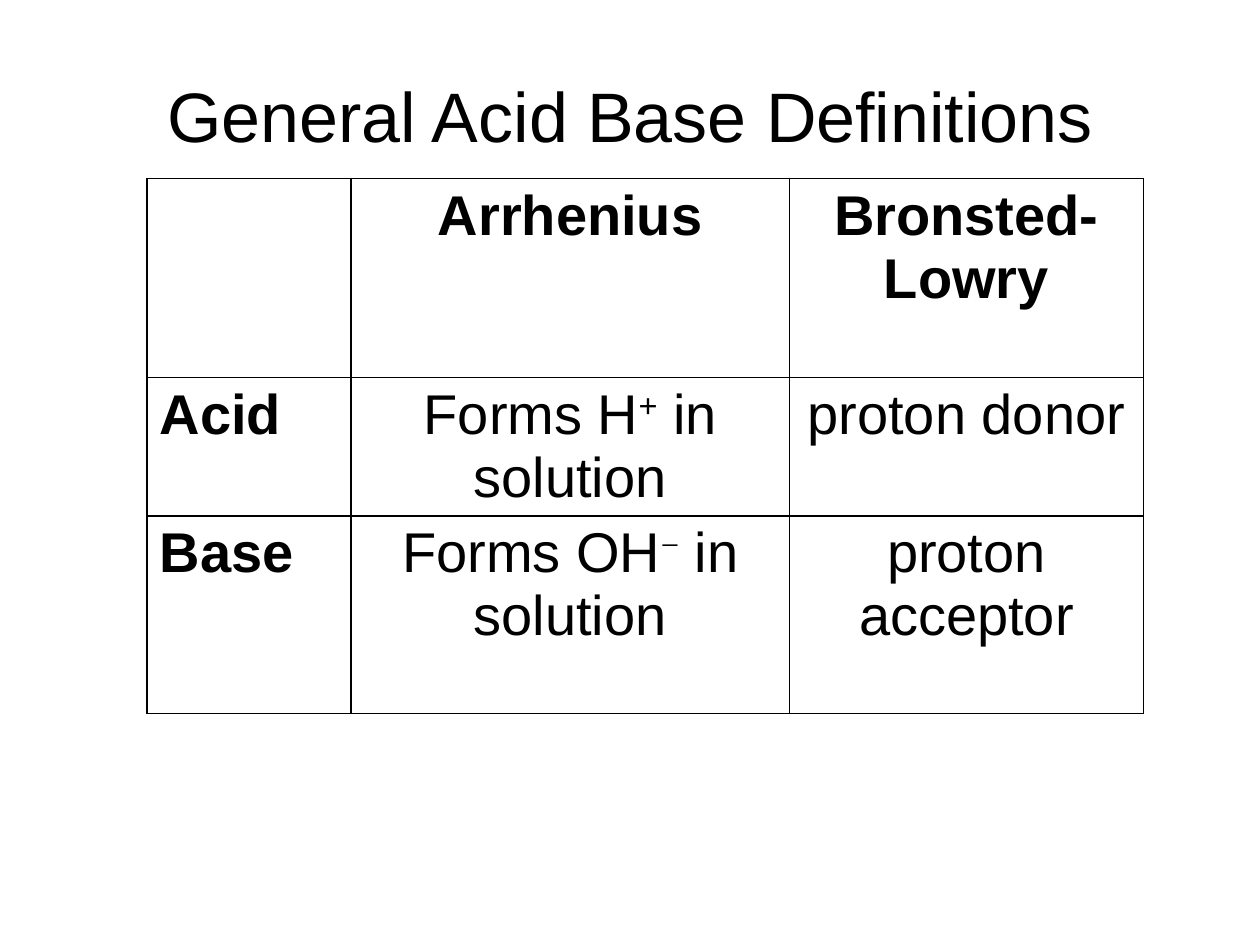
from lxml import etree
from pptx import Presentation
from pptx.dml.color import RGBColor
from pptx.enum.text import MSO_ANCHOR, MSO_AUTO_SIZE, PP_ALIGN
from pptx.oxml.ns import qn
from pptx.util import Pt

BLACK = RGBColor(0x00, 0x00, 0x00)
CENTER, LEFT = PP_ALIGN.CENTER, PP_ALIGN.LEFT
BOTTOM = MSO_ANCHOR.BOTTOM
NO_AUTOFIT = MSO_AUTO_SIZE.NONE

BODY_FONT = "Arial"
OUTER_LINE, INNER_LINE = Pt(0.75), Pt(1)
COLUMN_WIDTHS = (116.6, 250.6, 202.3)
ROW_HEIGHTS = (113.8, 67, 113)

DEFINITIONS = (
    ((), ("Arrhenius",), ("Bronsted-Lowry",)),
    (("Acid",), ("Forms H", "+", " in solution"), ("proton donor",)),
    (("Base",), ("Forms OH", "−", " in solution"), ("proton acceptor",)),
)
CHARGE_FONTS = {"+": BODY_FONT, "−": "Times New Roman"}


def apply_format(target, values):
    """Set each named attribute of the target."""
    for name, value in values.items():
        setattr(target, name, value)


def add_run(paragraph, text, size, bold=False):
    """Add black text, raising ion charges to superscript."""
    run = paragraph.add_run()
    run.text = text
    apply_format(run.font, {"name": CHARGE_FONTS.get(text, BODY_FONT),
                            "size": Pt(size), "bold": bold})
    run.font.color.rgb = BLACK
    if text in CHARGE_FONTS:
        run._r.get_or_add_rPr().set("baseline", "30000")


def add_title(slide, text):
    """Place and format the slide title."""
    title = slide.shapes.title
    apply_format(title, {"left": Pt(54), "top": Pt(36),
                         "width": Pt(612), "height": Pt(55.4)})
    apply_format(title.text_frame, {"word_wrap": True, "auto_size": NO_AUTOFIT,
                                    "vertical_anchor": BOTTOM,
                                    "margin_bottom": Pt(2)})
    heading = title.text_frame.paragraphs[0]
    heading.alignment = CENTER
    add_run(heading, text, 40)


def set_borders(cell, widths):
    """Draw black cell borders from a mapping of side to width."""
    properties = cell._tc.get_or_add_tcPr()
    for side, width in widths.items():
        line = etree.SubElement(properties, qn(f"a:ln{side}"), w=str(width))
        fill = etree.SubElement(line, qn("a:solidFill"))
        etree.SubElement(fill, qn("a:srgbClr"), val=str(BLACK))


def fill_cell(cell, texts, row, column):
    """Write one definition cell with its borders."""
    last_row, last_column = len(ROW_HEIGHTS) - 1, len(COLUMN_WIDTHS) - 1
    on_edge = {"L": column == 0, "R": column == last_column,
               "T": row == 0, "B": row == last_row}
    set_borders(cell, {side: OUTER_LINE if outer else INNER_LINE
                       for side, outer in on_edge.items()})
    cell.fill.background()
    paragraph = cell.text_frame.paragraphs[0]
    paragraph.alignment = CENTER if column else LEFT
    for text in texts:
        add_run(paragraph, text, 32, bold=row == 0 or column == 0)


def add_definitions(slide):
    """Add the table of acid and base definitions."""
    table = slide.shapes.add_table(
        len(ROW_HEIGHTS), len(COLUMN_WIDTHS), Pt(84), Pt(102),
        Pt(sum(COLUMN_WIDTHS)), Pt(sum(ROW_HEIGHTS))).table
    apply_format(table, {"first_row": False, "horz_banding": False})
    for column, width in zip(table.columns, COLUMN_WIDTHS):
        column.width = Pt(width)
    for row, height in zip(table.rows, ROW_HEIGHTS):
        row.height = Pt(height)
    for row, entries in enumerate(DEFINITIONS):
        for column, texts in enumerate(entries):
            fill_cell(table.cell(row, column), texts, row, column)


def main():
    """Build and save the slide."""
    presentation = Presentation()
    apply_format(presentation, {"slide_width": Pt(720), "slide_height": Pt(540)})
    slide = presentation.slides.add_slide(presentation.slide_layouts[5])
    add_definitions(slide)
    add_title(slide, "General Acid Base Definitions")
    presentation.save("out.pptx")


if __name__ == "__main__":
    main()
